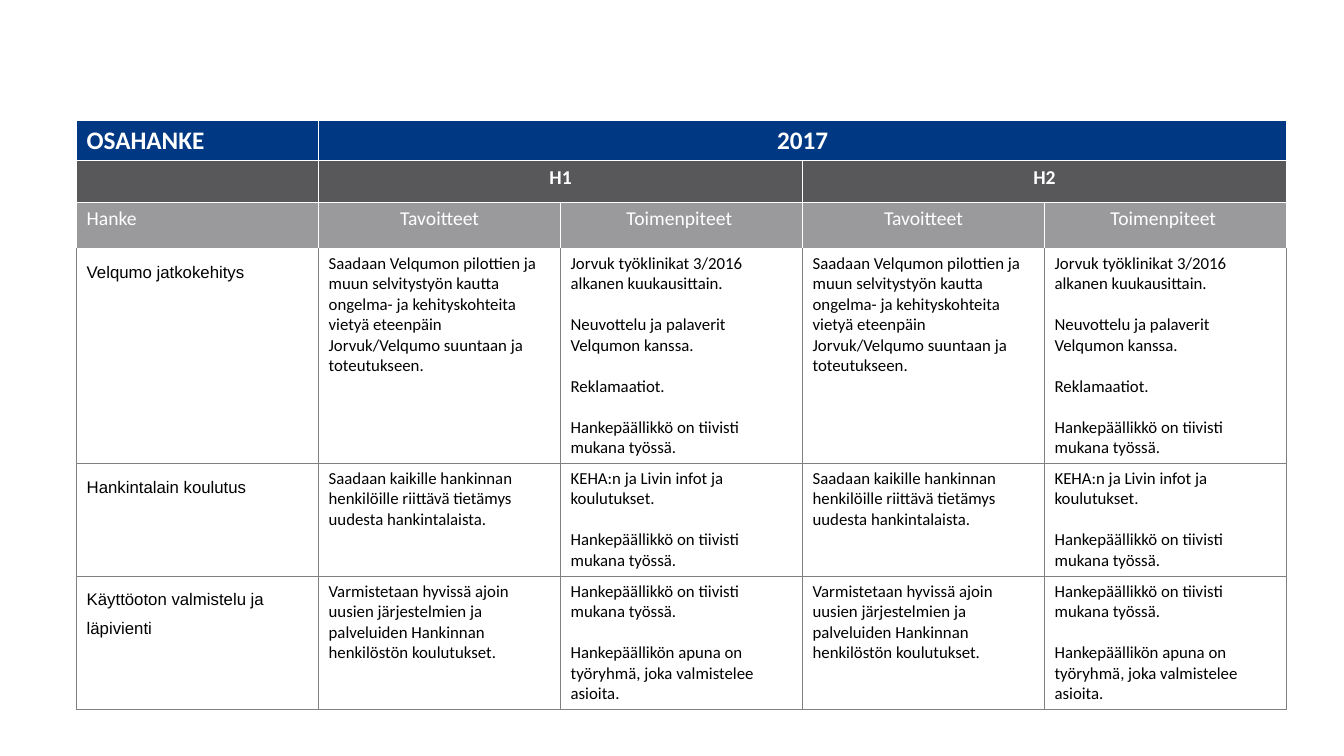
from dataclasses import dataclass

from lxml.etree import SubElement as Sub
from pptx import Presentation
from pptx.dml.color import RGBColor as RGB
from pptx.enum.text import PP_ALIGN as Align
from pptx.oxml.ns import qn
from pptx.util import Inches, Pt

YEAR = ("OSAHANKE", "2017")
HALVES = ("H1", "H2")
HEADS = ("Tavoitteet", "Toimenpiteet ")
# Project, goals, actions; both halves of the year share goals and actions
PLANS = [
    ("Velqumo jatkokehitys",
     ["Saadaan Velqumon pilottien ja muun selvitystyön kautta ongelma- ja "
      "kehityskohteita vietyä eteenpäin Jorvuk/Velqumo suuntaan ja "
      "toteutukseen."],
     ["Jorvuk työklinikat 3/2016 alkanen kuukausittain.",
      "Neuvottelu ja palaverit Velqumon kanssa.",
      "Reklamaatiot.",
      "Hankepäällikkö on tiivisti mukana työssä."]),
    ("Hankintalain koulutus",
     ["Saadaan kaikille hankinnan henkilöille riittävä tietämys uudesta "
      "hankintalaista."],
     ["KEHA:n ja Livin infot ja koulutukset.",
      "Hankepäällikkö on tiivisti mukana työssä."]),
    ("Käyttöoton valmistelu ja läpivienti",
     ["Varmistetaan hyvissä ajoin uusien järjestelmien ja palveluiden "
      "Hankinnan henkilöstön koulutukset."],
     ["Hankepäällikkö on tiivisti mukana työssä.",
      "Hankepäällikön apuna on työryhmä, joka valmistelee asioita."]),
]


@dataclass(frozen=True)
class Theme:
    navy: str = "003883"
    dark: str = "58585A"
    mid: str = "9A9A9D"
    line: str = "808080"
    white: str = "FFFFFF"
    black: str = "000000"
    font: str = "Calibri"
    label: str = "Arial"
    big: int = 18
    head: int = 14
    body: int = 12
    gap: float = 14.6


T = Theme()
LEFT, TOP, COL = 0.76, 1.19, 2.4
ROWS = (0.4, 0.41, 0.46, 2.13, 1.12, 1.32)
WIDE = 1 + len(HALVES) * len(HEADS)


def write(cell, *lines, size=T.body, color=T.black, font=T.font,
          bold=False, align=Align.LEFT, pitch=None):
    """Fill a cell with one paragraph per line, a line's height apart."""
    frame = cell.text_frame
    for i, line in enumerate(lines):
        para = frame.add_paragraph() if i else frame.paragraphs[0]
        para.alignment = align
        if pitch:
            para.line_spacing = pitch
        if i:
            para.space_before = Pt(T.gap)
        run = para.add_run()
        run.text = line
        face = run.font
        face.name, face.size, face.bold = font, Pt(size), bold
        face.color.rgb = RGB.from_string(color)


def style(cell, fill=None, edge=T.white, top=None):
    """Draw the four borders, then set the fill, in schema order."""
    props = cell._tc.get_or_add_tcPr()
    for side in "LRTB":
        line = Sub(props, qn(f"a:ln{side}"), w=str(Pt(1)))
        solid = Sub(line, qn("a:solidFill"))
        tone = top if side == "T" and top else edge
        Sub(solid, qn("a:srgbClr"), val=tone)
    if fill:
        cell.fill.solid()
        cell.fill.fore_color.rgb = RGB.from_string(fill)
    else:
        cell.fill.background()


def heads(grid):
    for r, fill in enumerate((T.navy, T.dark, T.mid)):
        for c in range(WIDE):
            style(grid.cell(r, c), fill)
    span = len(HEADS)
    grid.cell(0, 1).merge(grid.cell(0, WIDE - 1))
    big = dict(size=T.big, color=T.white, bold=True)
    small = dict(size=T.head, color=T.white)
    write(grid.cell(0, 0), YEAR[0], **big)
    write(grid.cell(0, 1), YEAR[1], align=Align.CENTER, **big)
    write(grid.cell(2, 0), "Hanke", **small)
    for h, half in enumerate(HALVES):
        first = 1 + h * span
        grid.cell(1, first).merge(grid.cell(1, first + span - 1))
        write(grid.cell(1, first), half, bold=True, align=Align.CENTER, **small)
        for i, head in enumerate(HEADS):
            write(grid.cell(2, first + i), head, align=Align.CENTER, **small)


def plans(grid):
    for r, (name, *parts) in enumerate(PLANS, 3):
        for c in range(WIDE):
            cell = grid.cell(r, c)
            style(cell, edge=T.line, top=T.white if r == 3 else None)
            if c:
                write(cell, *parts[(c - 1) % len(parts)])
            else:
                write(cell, name, font=T.label, pitch=1.5)


def main():
    deck = Presentation()
    deck.slide_width, deck.slide_height = Inches(13.33), Inches(7.5)
    slide = deck.slides.add_slide(deck.slide_layouts[6])
    grid = slide.shapes.add_table(
        len(ROWS), WIDE, Inches(LEFT), Inches(TOP),
        Inches(COL * WIDE), Inches(sum(ROWS))).table
    grid.first_row = grid.horz_banding = False
    for col in grid.columns:
        col.width = Inches(COL)
    for row, tall in zip(grid.rows, ROWS):
        row.height = Inches(tall)
    heads(grid)
    plans(grid)
    deck.save("out.pptx")


if __name__ == "__main__":
    main()
